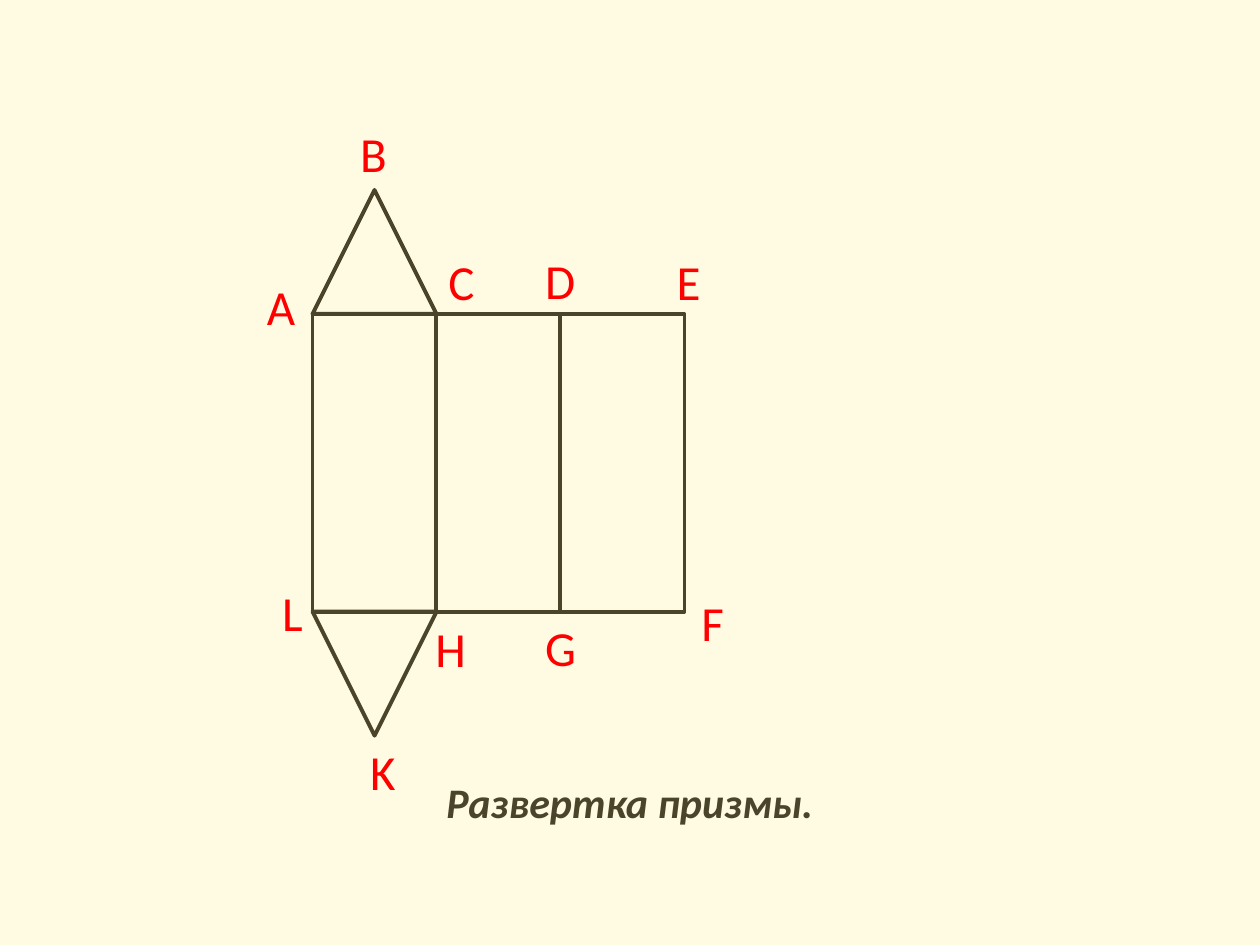
import pptx
import pptx.util
import pptx.dml.color
import pptx.enum.shapes
import pptx.enum.text

Cm = pptx.util.Cm
Pt = pptx.util.Pt
RGBColor = pptx.dml.color.RGBColor
Shape = pptx.enum.shapes.MSO_SHAPE
Align = pptx.enum.text.PP_ALIGN
Fit = pptx.enum.text.MSO_AUTO_SIZE

CREAM = RGBColor(0xFE, 0xFB, 0xE2)
OLIVE = RGBColor(0x4A, 0x45, 0x2A)
RED = RGBColor(0xFF, 0x00, 0x00)

# Net of the prism, in cm
LEFT, TOP = 6.3, 6.33
SIDE, HIGH = 2.5, 6

# Letter, left, top, width in cm
MARKS = [
    ("A", 5.13, 5.44, 1.09),
    ("В", 7.01, 2.36, 1.07),
    ("С", 8.79, 4.95, 1.04),
    ("D", 10.74, 4.93, 1.12),
    ("Е", 13.39, 4.95, 0.99),
    ("F", 13.89, 11.81, 0.97),
    ("G", 10.74, 12.32, 1.14),
    ("H", 8.53, 12.34, 1.14),
    ("K", 7.21, 14.83, 1.32),
    ("L", 5.44, 11.61, 0.94),
]


class Page:
    font = "Calibri"
    line = Pt(2.25)

    def __init__(self, deck):
        self.slide = deck.slides.add_slide(deck.slide_layouts[6])
        fill = self.slide.background.fill
        fill.solid()
        fill.fore_color.rgb = CREAM

    def face(self, kind, x, y, w, h, turn=0):
        """Draw one outlined face of the net."""
        shape = self.slide.shapes.add_shape(kind, Cm(x), Cm(y), Cm(w), Cm(h))
        shape.rotation = turn
        shape.shadow.inherit = False
        shape.fill.background()
        shape.line.color.rgb = OLIVE
        shape.line.width = self.line

    def text(self, words, x, y, w, h, size, color, wrap=False, bold=False,
             align=Align.LEFT):
        """Add a text box with one run; bold text is also italic."""
        box = self.slide.shapes.add_textbox(Cm(x), Cm(y), Cm(w), Cm(h))
        frame = box.text_frame
        frame.word_wrap = wrap
        frame.auto_size = Fit.NONE if wrap else Fit.SHAPE_TO_FIT_TEXT
        para = frame.paragraphs[0]
        para.alignment = align
        run = para.add_run()
        run.text = words
        run.font.name = self.font
        run.font.size = Pt(size)
        run.font.color.rgb = color
        run.font.bold = run.font.italic = bold


def main():
    deck = pptx.Presentation()
    deck.slide_width, deck.slide_height = Cm(25.4), Cm(19.05)
    page = Page(deck)

    # Caption
    page.text("Развертка призмы.", 1.27, 15.52, 22.86, 1.5, 24, OLIVE,
              wrap=True, bold=True, align=Align.CENTER)

    # Side faces
    for i in range(3):
        page.face(Shape.RECTANGLE, LEFT + i * SIDE, TOP, SIDE, HIGH)

    # Bases
    page.face(Shape.ISOSCELES_TRIANGLE, LEFT, TOP - SIDE, SIDE, SIDE)
    page.face(Shape.ISOSCELES_TRIANGLE, LEFT, TOP + HIGH, SIDE, SIDE, 180)

    # Vertex letters
    for mark, x, y, w in MARKS:
        page.text(mark, x, y, w, 1.45, 28, RED)

    deck.save("out.pptx")


if __name__ == "__main__":
    main()
